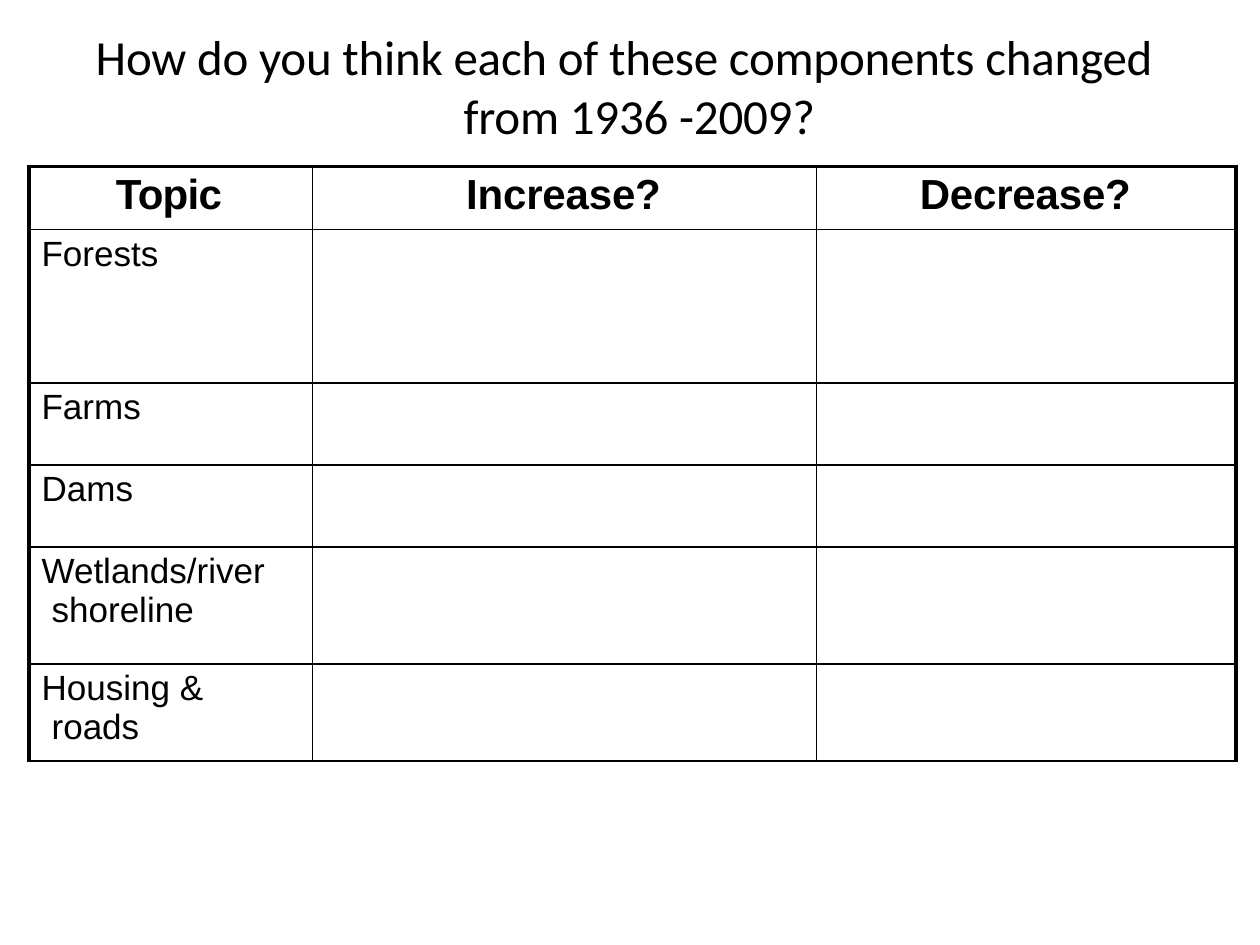
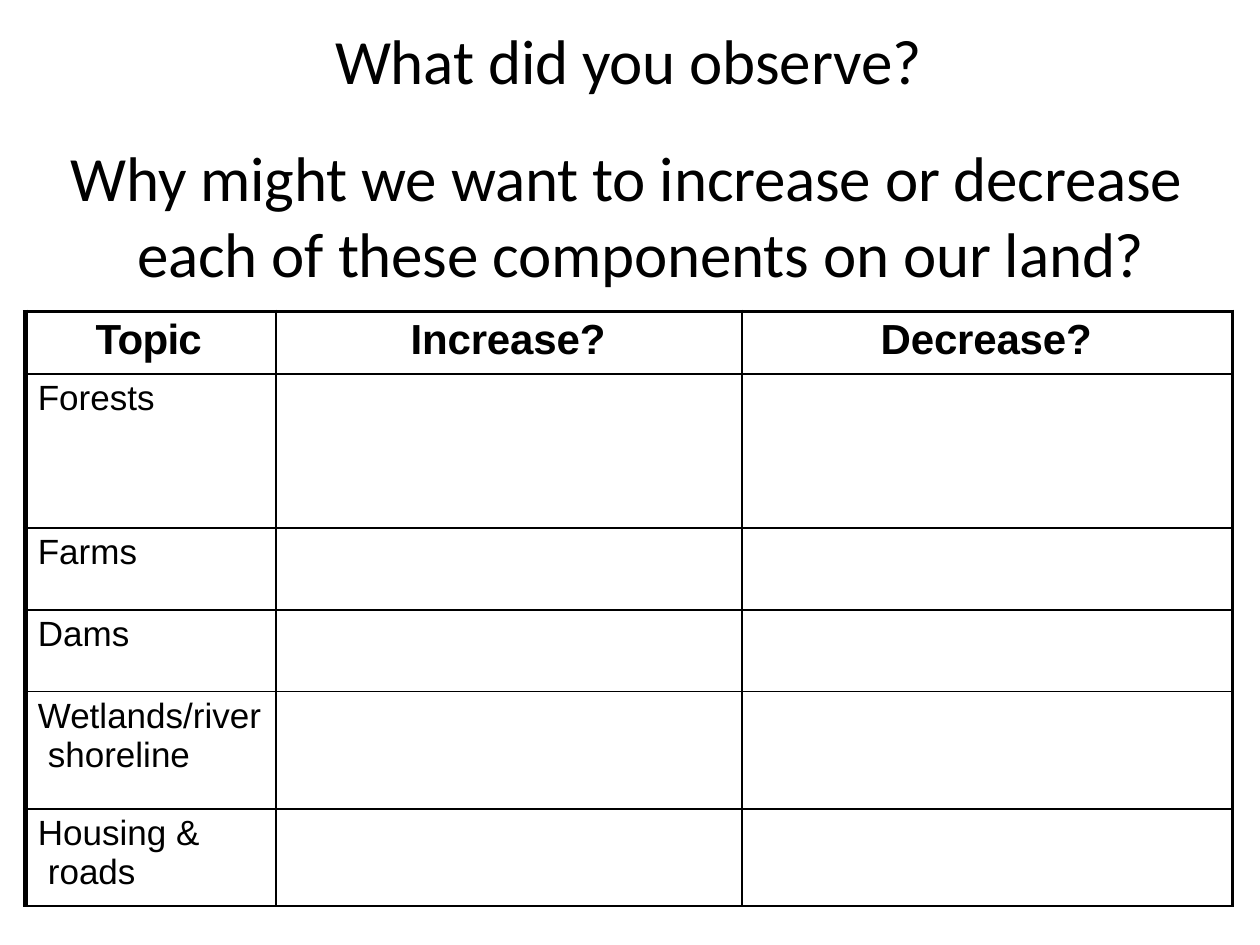
from lxml.etree import SubElement as Sub
from pptx import Presentation
from pptx.dml.color import RGBColor as Rgb
from pptx.enum.text import MSO_ANCHOR as Anchor, MSO_AUTO_SIZE as Auto, PP_ALIGN as Align
from pptx.oxml.ns import qn
from pptx.util import Inches, Pt

INK = "000000"
HEAD = {"name": "Arial", "size": Pt(24), "bold": True}
BODY = {"name": "Arial", "size": Pt(20), "bold": False}
SMALL = {"name": "Calibri", "size": Pt(28), "bold": False}
LARGE = {"name": "Calibri", "size": Pt(36), "bold": False}

HEADS = ["Topic", "Increase?", "Decrease?"]
TOPICS = ["Forests", "Farms", "Dams", "Wetlands/river\vshoreline", "Housing &\vroads"]
ROWS = [0.5, 1.22, 0.65, 0.65, 0.93, 0.77]


def write(frame, text, style, left, first, gap, track):
    para = frame.paragraphs[0]
    para.text = text
    para.alignment = Align.LEFT
    para.space_before = Pt(gap)
    props = para._p.get_or_add_pPr()
    props.set("marL", str(Inches(left)))
    props.set("indent", str(Inches(first)))
    for run in para.runs:
        for key, value in style.items():
            setattr(run.font, key, value)
        run.font.color.rgb = Rgb.from_string(INK)
        run._r.get_or_add_rPr().set("spc", str(track))


def edge(cell, widths):
    props = cell._tc.get_or_add_tcPr()
    for side, width in zip("LRTB", widths):
        line = Sub(props, qn(f"a:ln{side}"), w=str(Pt(width)))
        fill = Sub(line, qn("a:solidFill"))
        Sub(fill, qn("a:srgbClr"), val=INK)
    cell.fill.background()


SLIDES = [
    {
        "texts": [
            ("How do you think each of these components changed\vfrom 1936 -2009?",
             (0.75, 0.2, 8.51, 0.96), SMALL, 2.93, -2.92),
        ],
        "place": (0.23, 1.32), "cols": [2.25, 4, 3.33],
        "starts": [0.69, 1.22, 0.82], "rim": 2.25,
    },
    {
        "texts": [
            ("What did you observe?", (2.65, 0.16, 4.71, 0.63), LARGE, 0.01, 0),
            ("Why might we want to increase or decrease\veach of these components on our land?",
             (0.55, 1.09, 8.91, 1.23), LARGE, 0.54, -0.53),
        ],
        "place": (0.2, 2.47), "cols": [1.99, 3.7, 3.89],
        "starts": [0.56, 1.07, 1.1], "rim": 3,
    },
]

deck = Presentation()
deck.slide_width, deck.slide_height = Inches(10), Inches(7.5)

for page in SLIDES:
    slide = deck.slides.add_slide(deck.slide_layouts[5])
    for n, (text, box, style, left, first) in enumerate(page["texts"]):
        spot = [Inches(v) for v in box]
        shape = slide.shapes.add_textbox(*spot) if n else slide.shapes.title
        shape.left, shape.top, shape.width, shape.height = spot
        frame = shape.text_frame
        setup = {"word_wrap": True, "auto_size": Auto.NONE, "vertical_anchor": Anchor.TOP,
                 "margin_left": 0, "margin_right": 0, "margin_bottom": 0,
                 "margin_top": Inches(0.01)}
        for key, value in setup.items():
            setattr(frame, key, value)
        write(frame, text, style, left, first, 1, -10)

    x, y = page["place"]
    size = (len(ROWS), len(HEADS))
    area = [Inches(v) for v in (x, y, sum(page["cols"]), sum(ROWS))]
    table = slide.shapes.add_table(*size, *area).table
    table.first_row = table.horz_banding = False
    for col, width in zip(table.columns, page["cols"]):
        col.width = Inches(width)
    for row, height in zip(table.rows, ROWS):
        row.height = Inches(height)

    for r in range(size[0]):
        for c in range(size[1]):
            cell = table.cell(r, c)
            cell.margin_left = cell.margin_right = cell.margin_bottom = 0
            cell.margin_top = Inches(0.04)
            edge(cell, (1 if c else page["rim"], 2.25 if c == 2 else 1, 1 if r else 2.25, 1))
            if r == 0:
                track = -10 if c else -40
                write(cell.text_frame, HEADS[c], HEAD, page["starts"][c], 0, 3, track)
            elif c == 0:
                write(cell.text_frame, TOPICS[r - 1], BODY, 0.18, -0.08, 3, 0)

deck.save("out.pptx")
